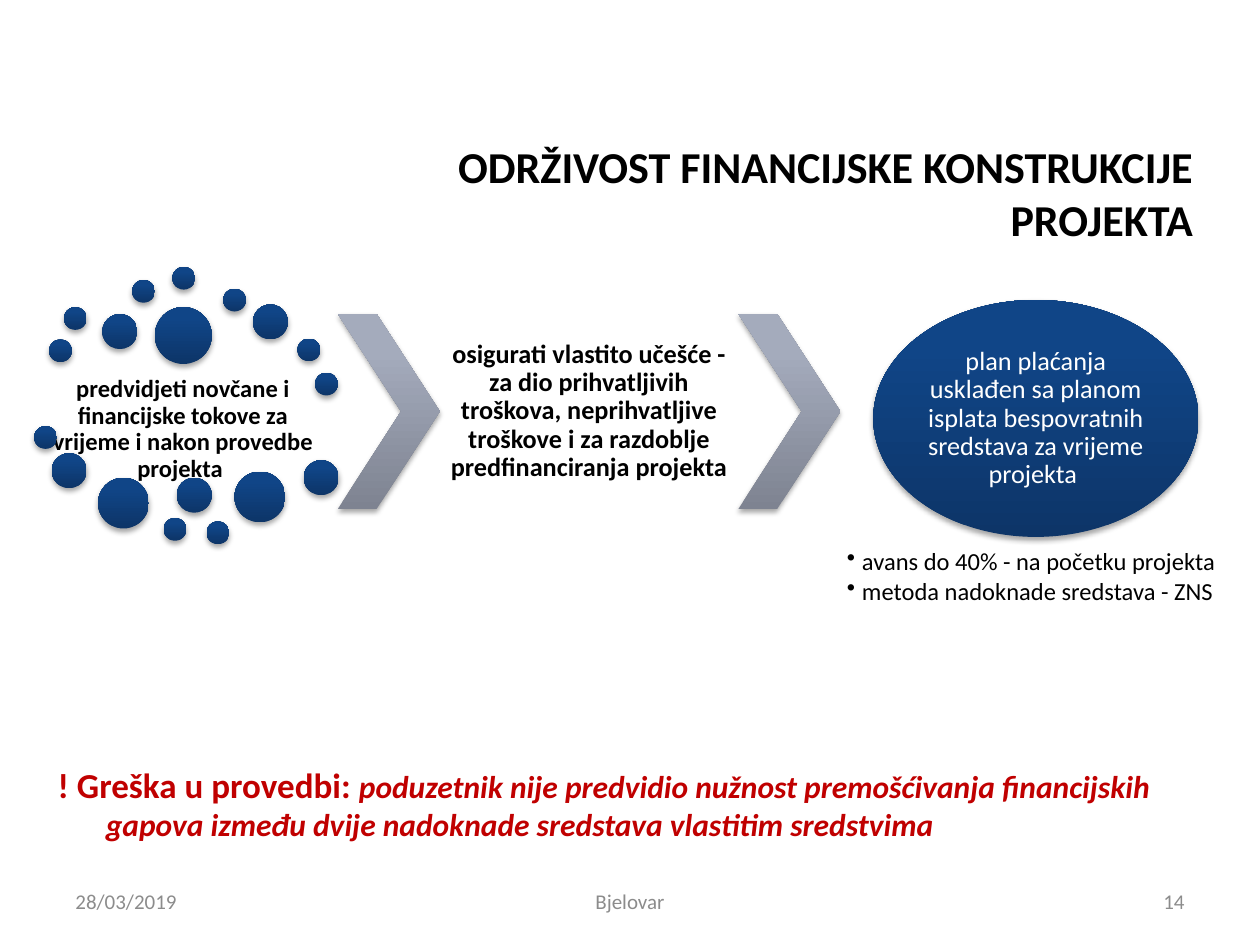
from pptx import Presentation
from pptx import util as u
from pptx.dml.color import RGBColor
from pptx.enum import shapes, text
from pptx.oxml import parse_xml
from pptx.oxml.ns import nsdecls, qn

COLOURS = {"ink": "000000", "light": "FFFFFF", "warning": "C00000", "footer": "8C8C8C"}
BLUE = [(0, "0D3568"), (80, "104587"), (100, "0E458A")]
GREY = [(0, "7E8391"), (80, "A4ABBC"), (100, "A4ABBE")]
ALIGN = text.PP_ALIGN
SMALL, MEDIUM, LARGE, LARGEST = 13, 20, 29, 32.5

# Left, top and diameter of each dot, relative to the cloud
DOTS = [
    (9, 42, SMALL), (17.5, 23.5, SMALL), (39.5, 27.5, MEDIUM), (56.5, 8, SMALL),
    (79.5, 0.5, SMALL), (108.5, 13, SMALL), (125.5, 22, MEDIUM), (151, 41.5, SMALL),
    (161, 61, SMALL), (69.5, 23.5, LARGEST), (0.5, 91.5, SMALL), (10.5, 107, MEDIUM),
    (37, 121, LARGE), (74.5, 144, SMALL), (82, 121, MEDIUM), (99, 146, SMALL),
    (115, 117.5, LARGE), (154.5, 111, MEDIUM),
]


def points(*values):
    return [u.Pt(value) for value in values]


def add_text(page, place, paragraphs, size=14, colour="ink", bold=False, align=ALIGN.LEFT,
             anchor=text.MSO_ANCHOR.MIDDLE, insets=(1.5, 1.5, 1.5, 1.5), spacing=None,
             after=0, bullet=False, margin=0, indent=0):
    """Add a text box; each paragraph is a list of (text, font overrides)."""
    box = page.shapes.add_textbox(*points(*place))
    frame = box.text_frame
    frame.word_wrap = True
    frame.vertical_anchor = anchor
    (frame.margin_left, frame.margin_top,
     frame.margin_right, frame.margin_bottom) = points(*insets)
    for number, spans in enumerate(paragraphs):
        para = frame.paragraphs[0] if number == 0 else frame.add_paragraph()
        para.alignment = align
        para.space_after = u.Pt(after)
        if spacing:
            para.line_spacing = spacing
        properties = para._p.get_or_add_pPr()
        if margin:
            properties.set("marL", str(u.Pt(margin)))
            properties.set("indent", str(u.Pt(indent)))
        if bullet:
            properties.append(parse_xml(f'<a:buChar {nsdecls("a")} char="•"/>'))
        for words, changes in spans:
            for line, part in enumerate(words.split("\n")):
                if line:
                    para.add_line_break()
                span = para.add_run()
                span.text = part
                font = span.font
                font.name = "Calibri"
                font.size = u.Pt(changes.get("size", size))
                font.bold = bold
                font.italic = changes.get("italic", False)
                font.color.rgb = RGBColor.from_string(COLOURS[colour])
    return box


def add_glossy(page, kind, place, stops):
    """Add a preset shape with a vertical gradient and a soft shadow."""
    shape = page.shapes.add_shape(kind, *points(*place))
    shape.line.fill.background()
    shape.fill.gradient()
    shape.fill.gradient_angle = 90
    stop_list = shape._element.spPr.find(qn("a:gradFill")).find(qn("a:gsLst"))
    for stop in list(stop_list):
        stop_list.remove(stop)
    for position, colour in stops:
        stop_list.append(parse_xml(
            f'<a:gs {nsdecls("a")} pos="{position * 1000}"><a:srgbClr val="{colour}"/></a:gs>'))
    shape.shadow.inherit = False
    shape._element.spPr.find(qn("a:effectLst")).append(parse_xml(
        f'<a:outerShdw {nsdecls("a")} blurRad="{u.Pt(3.1)}" dist="{u.Pt(1.8)}" dir="5400000" '
        'rotWithShape="0"><a:srgbClr val="000000"><a:alpha val="35000"/></a:srgbClr>'
        '</a:outerShdw>'))
    return shape


def add_cloud(page, left, top):
    add_text(page, (left + 6, top + 59, 159, 69),
             [[("predvidjeti novčane i financijske tokove za vrijeme i nakon "
                "provedbe projekta ", {})]],
             bold=True, align=ALIGN.CENTER, spacing=0.9)
    for x, y, size in DOTS:
        add_glossy(page, shapes.MSO_SHAPE.OVAL, (left + x, top + y, size, size), BLUE)


def add_own_share(page, left, top, width, height):
    """Place the middle step between two chevrons."""
    arrow = 58.3
    for x in (left, left + width - arrow):
        chevron = add_glossy(page, shapes.MSO_SHAPE.CHEVRON, (x, top, arrow, height), GREY)
        chevron.adjustments[0] = 0.62
    add_text(page, (left + arrow, top, width - 2 * arrow, height),
             [[("osigurati vlastito učešće - za dio prihvatljivih troškova, neprihvatljive "
                "troškove i za razdoblje predfinanciranja projekta ", {})]],
             size=15, bold=True, align=ALIGN.CENTER, spacing=0.9, insets=(5, 1.5, 5, 1.5))


def add_payment_plan(page, left, top):
    add_glossy(page, shapes.MSO_SHAPE.OVAL, (left + 16.6, top, 185.8, 135.4), BLUE)
    add_text(page, (left + 43.6, top + 20, 131.8, 95.8),
             [[("plan plaćanja usklađen sa planom isplata bespovratnih sredstava "
                "za vrijeme projekta ", {})]],
             size=15, colour="light", align=ALIGN.CENTER, spacing=0.9, insets=(0, 0, 0, 0))
    add_text(page, (left, top + 141, 222.5, 98),
             [[("avans do 40% - na početku projekta", {})],
              [("metoda nadoknade sredstava - ZNS", {})]],
             anchor=text.MSO_ANCHOR.TOP, spacing=0.9, after=2,
             bullet=True, margin=8.64, indent=-8.64)


def add_warning(page, place):
    add_text(page, place,
             [[("! Greška u provedbi: ", {}),
               ("poduzetnik nije predvidio nužnost premošćivanja financijskih gapova između "
                "dvije nadoknade sredstava vlastitim sredstvima", {"size": 18, "italic": True})]],
             size=20, colour="warning", bold=True, anchor=text.MSO_ANCHOR.TOP,
             insets=(7.2, 3.6, 15, 3.6), margin=36.8, indent=-27.5)


def add_footer(page, top, height):
    for words, left, width, align in (("28/03/2019", 36, 168, ALIGN.LEFT),
                                      ("Bjelovar", 246, 228, ALIGN.CENTER),
                                      ("14", 516, 168, ALIGN.RIGHT)):
        add_text(page, (left, top, width, height), [[(words, {})]], size=12,
                 colour="footer", align=align, insets=(7.2, 3.6, 7.2, 3.6))


def main():
    deck = Presentation()
    deck.slide_width, deck.slide_height = points(720, 540)
    page = deck.slides.add_slide(deck.slide_layouts[6])
    # Title
    add_text(page, (46.8, 84.2, 648, 51.8),
             [[("ODRŽIVOST FINANCIJSKE KONSTRUKCIJE\nPROJEKTA", {})]],
             size=25.2, bold=True, align=ALIGN.RIGHT, insets=(7.2, 3.6, 13, 3.6))
    # Three steps
    add_cloud(page, 19, 152)
    add_own_share(page, 193, 179.3, 287.2, 111.6)
    add_payment_plan(page, 482.4, 171.4)
    # Warning and footer
    add_warning(page, (16.6, 432.7, 700, 53.3))
    add_footer(page, 500.5, 28.8)
    deck.save("out.pptx")


if __name__ == "__main__":
    main()
